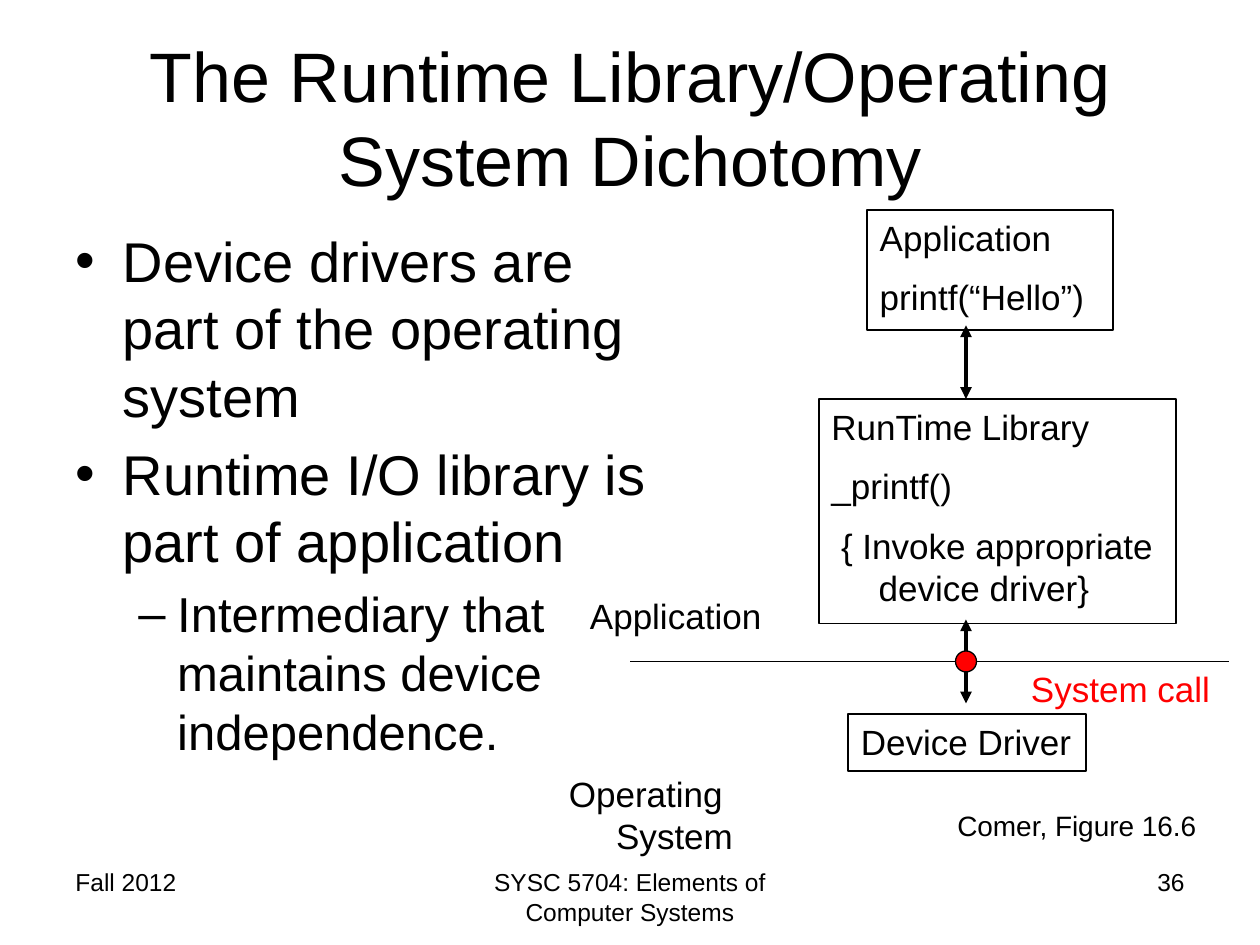
from dataclasses import dataclass

import pptx
import pptx.dml.color
import pptx.enum.shapes
import pptx.enum.text
import pptx.oxml
import pptx.oxml.ns
import pptx.util

PX = 7620
BLACK, RED = "000000", "FF0000"
ALIGN = pptx.enum.text.PP_ALIGN
ANCHOR = pptx.enum.text.MSO_ANCHOR
SHAPE = pptx.enum.shapes.MSO_SHAPE
HANG = 45


@dataclass
class Para:
    text: str
    size: int = 20
    color: str = BLACK
    align: ALIGN = ALIGN.LEFT
    before: float = 0
    margin: int = 0
    hang: int = 0
    bullet: str = ""
    level: int = 0


@dataclass
class Block:
    box: tuple[int, int, int, int]
    paras: list[Para]
    framed: bool = False
    wrap: bool = True
    anchor: ANCHOR = ANCHOR.TOP


@dataclass
class Line:
    start: tuple[int, int]
    end: tuple[int, int]
    width: float
    arrows: bool = False


def px(n: int) -> pptx.util.Emu:
    return pptx.util.Emu(n * PX)


def rgb(color: str) -> pptx.dml.color.RGBColor:
    return pptx.dml.color.RGBColor.from_string(color)


def add_xml(parent, tag: str, **attrs: str) -> None:
    el = pptx.oxml.parse_xml(f"<{tag} {pptx.oxml.ns.nsdecls('a')}/>")
    for name, value in attrs.items():
        el.set(name, value)
    parent.append(el)


def set_line(sp, color: str, width: float) -> None:
    sp.line.color.rgb = rgb(color)
    sp.line.width = pptx.util.Pt(width)


def write_para(p, para: Para) -> None:
    p.alignment = para.align
    p.level = para.level
    p.space_before = pptx.util.Pt(para.before)
    pPr = p._p.get_or_add_pPr()
    pPr.set("marL", str(px(para.margin)))
    pPr.set("indent", str(-px(para.hang)))
    if para.bullet:
        add_xml(pPr, "a:buFont", typeface="Arial")
        add_xml(pPr, "a:buChar", char=para.bullet)
    else:
        add_xml(pPr, "a:buNone")
    for i, text in enumerate(para.text.split("\n")):
        if i:
            p.add_line_break()
        r = p.add_run()
        r.text = text
        r.font.name = "Arial"
        r.font.size = pptx.util.Pt(para.size)
        r.font.color.rgb = rgb(para.color)


def draw_block(s, block: Block) -> None:
    box = [px(n) for n in block.box]
    if block.framed:
        sp = s.shapes.add_shape(SHAPE.RECTANGLE, *box)
        sp.shadow.inherit = False
        sp.fill.background()
        set_line(sp, BLACK, 1)
    else:
        sp = s.shapes.add_textbox(*box)
    tf = sp.text_frame
    tf.word_wrap = block.wrap
    tf.vertical_anchor = block.anchor
    for i, para in enumerate(block.paras):
        write_para(tf.add_paragraph() if i else tf.paragraphs[0], para)


def draw_line(s, line: Line) -> None:
    ends = [px(n) for n in line.start + line.end]
    cx = s.shapes.add_connector(pptx.enum.shapes.MSO_CONNECTOR.STRAIGHT, *ends)
    set_line(cx, BLACK, line.width)
    if line.arrows:
        for tag in ("a:headEnd", "a:tailEnd"):
            add_xml(cx.line._get_or_add_ln(), tag, type="triangle")
    add_xml(cx._element.spPr, "a:effectLst")


def draw_dot(s, x: int, y: int, size: int) -> None:
    sp = s.shapes.add_shape(SHAPE.OVAL, px(x - size // 2), px(y - size // 2), px(size), px(size))
    sp.shadow.inherit = False
    sp.fill.solid()
    sp.fill.fore_color.rgb = rgb(RED)
    set_line(sp, BLACK, 0.75)


def labels(*texts: str, size: int = 20, color: str = BLACK) -> list[Para]:
    return [Para(t, size, color, before=size / 2 if i else 0, margin=HANG, hang=HANG)
            for i, t in enumerate(texts)]


ARROW_X, BOUNDARY_Y = 920, 630

BLOCKS = [
    Block((60, 820, 280, 62), [Para("Fall 2012", 14)]),
    Block((410, 820, 380, 62),
          [Para("SYSC 5704: Elements of Computer Systems", 14, align=ALIGN.CENTER)]),
    Block((860, 820, 280, 62), [Para("36", 14, align=ALIGN.RIGHT)]),
    Block((60, 36, 1080, 150),
          [Para("The Runtime Library/Operating System Dichotomy", 40, align=ALIGN.CENTER)],
          anchor=ANCHOR.MIDDLE),
    Block((60, 210, 570, 594), [
        Para("Device drivers are part of the operating system", 32,
             margin=HANG, hang=HANG, bullet="•"),
        Para("Runtime I/O library is part of application", 32, before=6.4,
             margin=HANG, hang=HANG, bullet="•"),
        Para("Intermediary that maintains device independence.", 28, before=5.6,
             margin=97, hang=37, bullet="–", level=1),
    ]),
    Block((826, 200, 234, 114), labels("Application", "printf(“Hello”)"), framed=True),
    Block((780, 380, 340, 214),
          labels("RunTime Library", "_printf()", " { Invoke appropriate device driver}"),
          framed=True),
    Block((808, 680, 226, 54), labels("Device Driver"), framed=True, wrap=False),
    Block((900, 764, 264, 44), labels("Comer, Figure 16.6", size=16)),
    Block((550, 560, 200, 52), labels("Application")),
    Block((530, 730, 290, 92), labels("Operating\nSystem")),
    Block((970, 630, 210, 52), labels("System call", color=RED)),
]

LINES = [
    Line((ARROW_X, 310), (ARROW_X, 380), 2.25, arrows=True),
    Line((ARROW_X, 590), (ARROW_X, 670), 2.25, arrows=True),
    Line((600, BOUNDARY_Y), (1170, BOUNDARY_Y), 0.75),
]


def main() -> None:
    prs = pptx.Presentation()
    prs.slide_width, prs.slide_height = px(1200), px(900)
    s = prs.slides.add_slide(prs.slide_layouts[6])
    for block in BLOCKS:
        draw_block(s, block)
    for line in LINES:
        draw_line(s, line)
    draw_dot(s, ARROW_X, BOUNDARY_Y, 20)
    prs.save("out.pptx")


if __name__ == "__main__":
    main()
